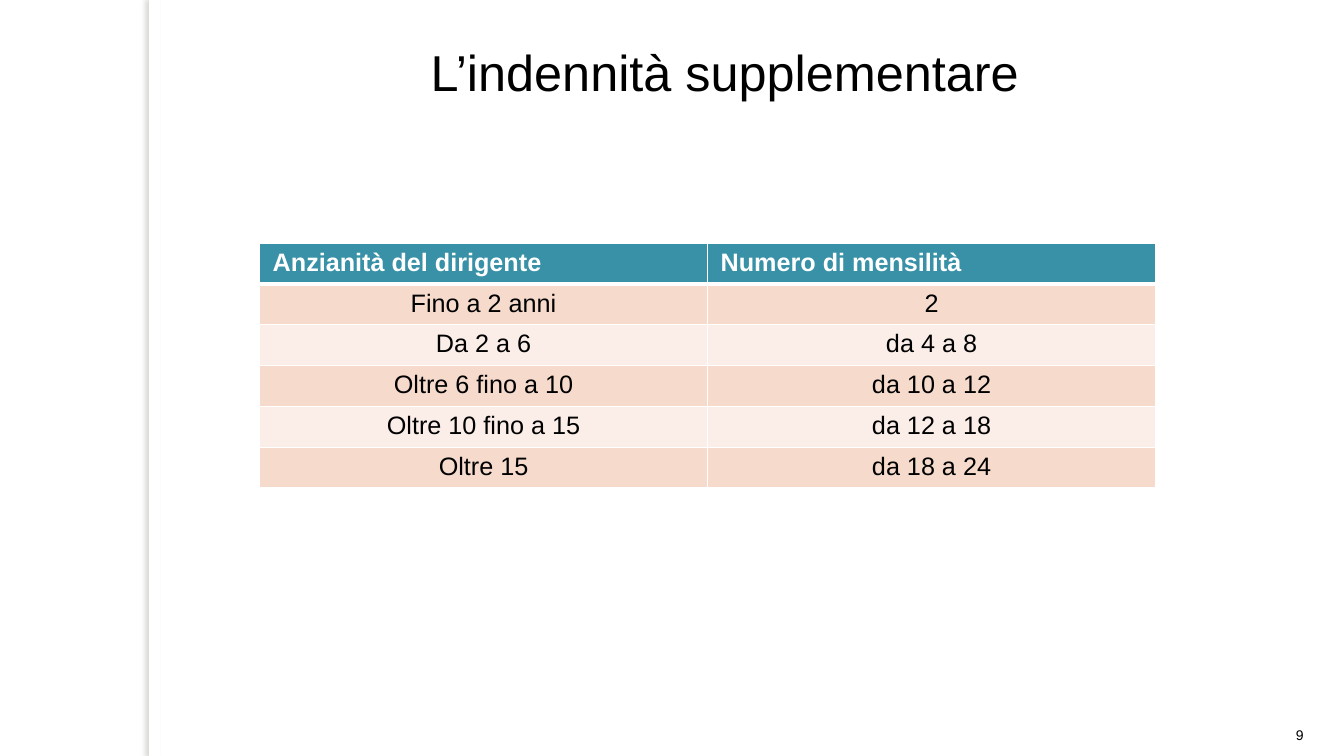
from dataclasses import dataclass

from lxml import etree
from pptx import Presentation
from pptx.dml.color import RGBColor
from pptx.enum import shapes, text
from pptx.oxml import ns
from pptx.util import Pt

WHITE = RGBColor(0xFF, 0xFF, 0xFF)
BLACK = RGBColor(0, 0, 0)
TEAL = RGBColor(0x38, 0x91, 0xA7)
PEACH = RGBColor(0xF6, 0xDB, 0xCD)
PALE_PEACH = RGBColor(0xFB, 0xEE, 0xE8)
SHADOW_GREY = RGBColor(0x73, 0x6F, 0x63)

FONT = "Arial"
EMU_PER_POINT = 12700
THIN, THICK = 1, 3


@dataclass(frozen=True)
class Box:
    left: float
    top: float
    width: float
    height: float

    def lengths(self) -> tuple[Pt, Pt, Pt, Pt]:
        return Pt(self.left), Pt(self.top), Pt(self.width), Pt(self.height)


@dataclass(frozen=True)
class Entitlement:
    seniority: str
    months: str


@dataclass(frozen=True)
class RowStyle:
    fill: RGBColor
    color: RGBColor
    bold: bool
    align: text.PP_ALIGN
    top_border: int
    bottom_border: int


PAGE_EDGE = Box(106.56, 0, 8, 540)
PAGE_NUMBER = Box(904.3, 496.8, 48.2, 37.4)
TITLE = Box(154.8, 25.9, 725.8, 51.1)
TABLE = Box(185.4, 173.8, 640, 175)

HEADINGS = Entitlement("Anzianità del dirigente", "Numero di mensilità")
ENTITLEMENTS = [
    Entitlement("Fino a 2 anni", "2"),
    Entitlement("Da 2 a 6", "da 4 a 8"),
    Entitlement("Oltre 6 fino a 10", "da 10 a 12"),
    Entitlement("Oltre 10 fino a 15", "da 12 a 18"),
    Entitlement("Oltre 15", "da 18 a 24"),
]


def add_run(paragraph, words: str, size: float, color: RGBColor,
            align: text.PP_ALIGN, bold: bool = False) -> None:
    paragraph.alignment = align
    run = paragraph.add_run()
    run.text = words
    run.font.name = FONT
    run.font.size = Pt(size)
    run.font.bold = bold
    run.font.color.rgb = color


def add_color(parent, color: RGBColor):
    return etree.SubElement(parent, ns.qn("a:srgbClr"), val=str(color))


def draw_page_edge(slide) -> None:
    edge = slide.shapes.add_shape(shapes.MSO_SHAPE.RECTANGLE, *PAGE_EDGE.lengths())
    edge.fill.solid()
    edge.fill.fore_color.rgb = WHITE
    edge.line.fill.background()
    edge.shadow.inherit = False
    effects = edge._element.spPr.find(ns.qn("a:effectLst"))
    shadow = etree.SubElement(
        effects, ns.qn("a:outerShdw"), blurRad=str(3 * EMU_PER_POINT),
        dist=str(3 * EMU_PER_POINT), dir=str(180 * 60000), algn="tl", rotWithShape="0")
    etree.SubElement(add_color(shadow, SHADOW_GREY), ns.qn("a:alpha"), val="25000")


def draw_page_number(slide) -> None:
    frame = slide.shapes.add_textbox(*PAGE_NUMBER.lengths()).text_frame
    frame.word_wrap = True
    frame.vertical_anchor = text.MSO_ANCHOR.BOTTOM
    add_run(frame.paragraphs[0], "9", 10, BLACK, text.PP_ALIGN.CENTER)


def draw_title(slide) -> None:
    title = slide.shapes.title
    title.left, title.top, title.width, title.height = TITLE.lengths()
    frame = title.text_frame
    frame.word_wrap = True
    frame.vertical_anchor = text.MSO_ANCHOR.TOP
    frame.auto_size = text.MSO_AUTO_SIZE.SHAPE_TO_FIT_TEXT
    add_run(frame.paragraphs[0], "L’indennità supplementare", 36, BLACK,
            text.PP_ALIGN.CENTER)


def set_borders(cell, top: int, bottom: int) -> None:
    """Give the cell white borders, with widths in points."""
    properties = cell._tc.get_or_add_tcPr()
    widths = {"a:lnL": THIN, "a:lnR": THIN, "a:lnT": top, "a:lnB": bottom}
    for position, (side, width) in enumerate(widths.items()):
        border = etree.Element(ns.qn(side), w=str(width * EMU_PER_POINT))
        add_color(etree.SubElement(border, ns.qn("a:solidFill")), WHITE)
        properties.insert(position, border)


def fill_cell(cell, words: str, style: RowStyle) -> None:
    cell.margin_left = cell.margin_right = Pt(9.4)
    cell.margin_top = cell.margin_bottom = Pt(3.6)
    cell.fill.solid()
    cell.fill.fore_color.rgb = style.fill
    set_borders(cell, style.top_border, style.bottom_border)
    add_run(cell.text_frame.paragraphs[0], words, 18, style.color, style.align, style.bold)


def style_for(row: int) -> RowStyle:
    if row == 0:
        return RowStyle(TEAL, WHITE, True, text.PP_ALIGN.LEFT, THIN, THICK)
    return RowStyle(PEACH if row % 2 else PALE_PEACH, BLACK, False,
                    text.PP_ALIGN.CENTER, THICK if row == 1 else THIN, THIN)


def draw_entitlements(slide) -> None:
    entries = [HEADINGS, *ENTITLEMENTS]
    table = slide.shapes.add_table(len(entries), 2, *TABLE.lengths()).table
    for column in table.columns:
        column.width = Pt(TABLE.width / 2)
    for row, entry in enumerate(entries):
        table.rows[row].height = Pt(TABLE.height / len(entries))
        for column, words in enumerate((entry.seniority, entry.months)):
            fill_cell(table.cell(row, column), words, style_for(row))


def main() -> None:
    deck = Presentation()
    deck.slide_width, deck.slide_height = Pt(960), Pt(540)
    slide = deck.slides.add_slide(deck.slide_layouts[5])
    slide.background.fill.solid()
    slide.background.fill.fore_color.rgb = WHITE
    draw_page_edge(slide)
    draw_page_number(slide)
    draw_entitlements(slide)
    draw_title(slide)
    deck.save("out.pptx")


if __name__ == "__main__":
    main()
